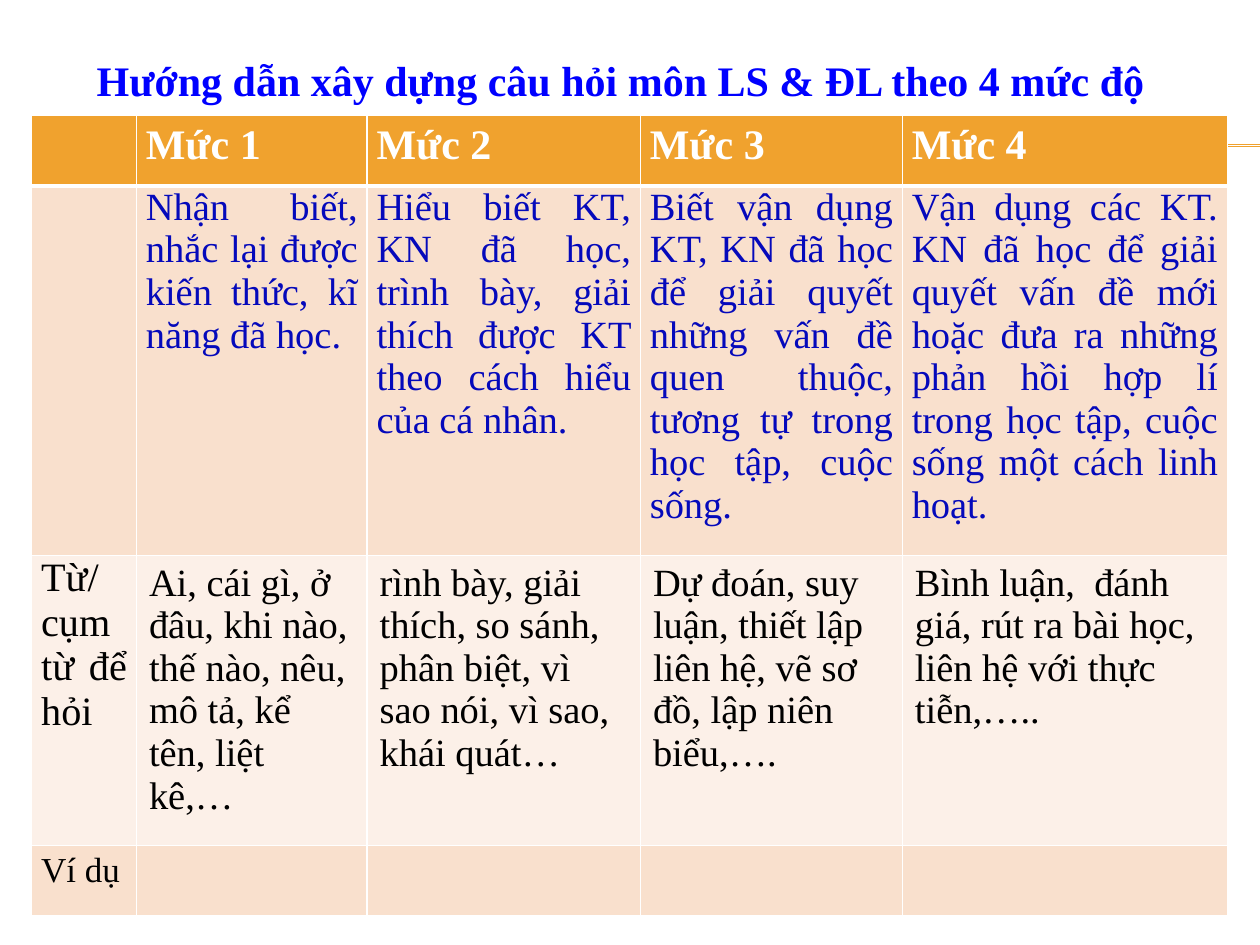
import pptx
import pptx.dml.color
import pptx.enum.shapes
import pptx.enum.text
import pptx.oxml
import pptx.oxml.ns
import pptx.util
from pptx.dml.color import RGBColor
from pptx.util import Cm

FONT = "Times New Roman"
ORANGE = RGBColor(0xF0, 0xA2, 0x2E)
PEACH = RGBColor(0xF9, 0xE0, 0xCD)
CREAM = RGBColor(0xFC, 0xF0, 0xE8)
WHITE = RGBColor(0xFF, 0xFF, 0xFF)
BLACK = RGBColor(0, 0, 0)
TITLE_BLUE = RGBColor(0, 0, 0xFF)
TEXT_BLUE = RGBColor(0x05, 0x09, 0xBB)

COL_WIDTHS = [2.11, 4.65, 5.51, 5.28, 6.55]
ROW_HEIGHTS = [1.42, 6.88, 5.41, 1.42]
ROW_FILLS = [ORANGE, PEACH, CREAM, PEACH]
ROW_COLORS = [WHITE, TEXT_BLUE, BLACK, BLACK]
ROW_SIZES = [24, 22, 22, 20]
LABEL_SIZE = 23
TEXTS = [
    ["", "Mức 1", "Mức 2", "Mức 3", "Mức 4"],
    ["",
     "Nhận biết, nhắc lại được kiến thức, kĩ năng đã học.",
     "Hiểu biết KT, KN đã học, trình bày, giải thích được KT theo cách hiểu của cá nhân.",
     "Biết vận dụng KT, KN đã học để giải quyết những vấn đề quen thuộc, tương tự "
     "trong học tập, cuộc sống.",
     "Vận dụng các KT. KN đã học để giải quyết vấn đề mới hoặc đưa ra những phản hồi "
     "hợp lí trong học tập, cuộc sống một cách linh hoạt."],
    ["Từ/  cụm từ để hỏi",
     "Ai, cái gì, ở đâu, khi nào, thế nào, nêu, mô tả, kể tên, liệt kê,…",
     "rình bày, giải thích, so sánh, phân biệt, vì sao nói, vì sao, khái quát…",
     "Dự đoán, suy luận, thiết lập liên hệ, vẽ sơ đồ, lập niên biểu,….",
     "Bình luận,  đánh giá, rút ra bài học, liên hệ với thực tiễn,….."],
    ["Ví dụ", "", "", "", ""],
]


def set_borders(cell, top, bottom):
    """Draw white cell borders; top and bottom are widths in points."""
    tcPr = cell._tc.get_or_add_tcPr()
    sides = [("lnL", 1), ("lnR", 1), ("lnT", top), ("lnB", bottom)]
    for i, (tag, width) in enumerate(sides):
        tcPr.insert(i, pptx.oxml.parse_xml(
            f'<a:{tag} {pptx.oxml.ns.nsdecls("a")} w="{pptx.util.Pt(width)}">'
            f'<a:solidFill><a:srgbClr val="{WHITE}"/></a:solidFill></a:{tag}>'))


def set_font(p, size, color, bold):
    p.font.name = FONT
    p.font.size = pptx.util.Pt(size)
    p.font.color.rgb = color
    p.font.bold = bold


prs = pptx.Presentation()
prs.slide_width = Cm(25.4)
prs.slide_height = Cm(19.05)
s = prs.slides.add_slide(prs.slide_layouts[6])

# Double rule behind the table
for y in (2.92, 2.95):
    line = s.shapes.add_connector(
        pptx.enum.shapes.MSO_CONNECTOR.STRAIGHT, Cm(1.42), Cm(y), Cm(25.4), Cm(y))
    line.line.color.rgb = ORANGE
    line.line.width = pptx.util.Pt(0.75)
    line._element.spPr.append(
        pptx.oxml.parse_xml(f'<a:effectLst {pptx.oxml.ns.nsdecls("a")}/>'))

# Title
title = s.shapes.add_textbox(Cm(1.7), Cm(0.98), Cm(23.2), Cm(1.25))
tf = title.text_frame
tf.word_wrap = True
p = tf.paragraphs[0]
p.text = "Hướng dẫn xây dựng câu hỏi môn LS & ĐL theo 4 mức độ"
set_font(p, 24, TITLE_BLUE, True)

# Table of the four levels
table = s.shapes.add_table(
    len(ROW_HEIGHTS), len(COL_WIDTHS), Cm(0.64), Cm(2.33),
    Cm(sum(COL_WIDTHS)), Cm(sum(ROW_HEIGHTS))).table
for col, width in zip(table.columns, COL_WIDTHS):
    col.width = Cm(width)
for row, height in zip(table.rows, ROW_HEIGHTS):
    row.height = Cm(height)

for r, texts in enumerate(TEXTS):
    for c, text in enumerate(texts):
        cell = table.cell(r, c)
        cell.fill.solid()
        cell.fill.fore_color.rgb = ROW_FILLS[r]
        set_borders(cell, 3 if r == 1 else 1, 3 if r == 0 else 1)
        p = cell.text_frame.paragraphs[0]
        p.text = text
        is_label = r == 2 and c == 0
        set_font(p, LABEL_SIZE if is_label else ROW_SIZES[r], ROW_COLORS[r], r == 0)
        if r != 2 or is_label:
            cell.margin_left = cell.margin_right = Cm(0.19)
            cell.margin_top = cell.margin_bottom = 0
            p.alignment = pptx.enum.text.PP_ALIGN.JUSTIFY
        if r in (0, 3):
            p.line_spacing = 1.15

prs.save("out.pptx")
